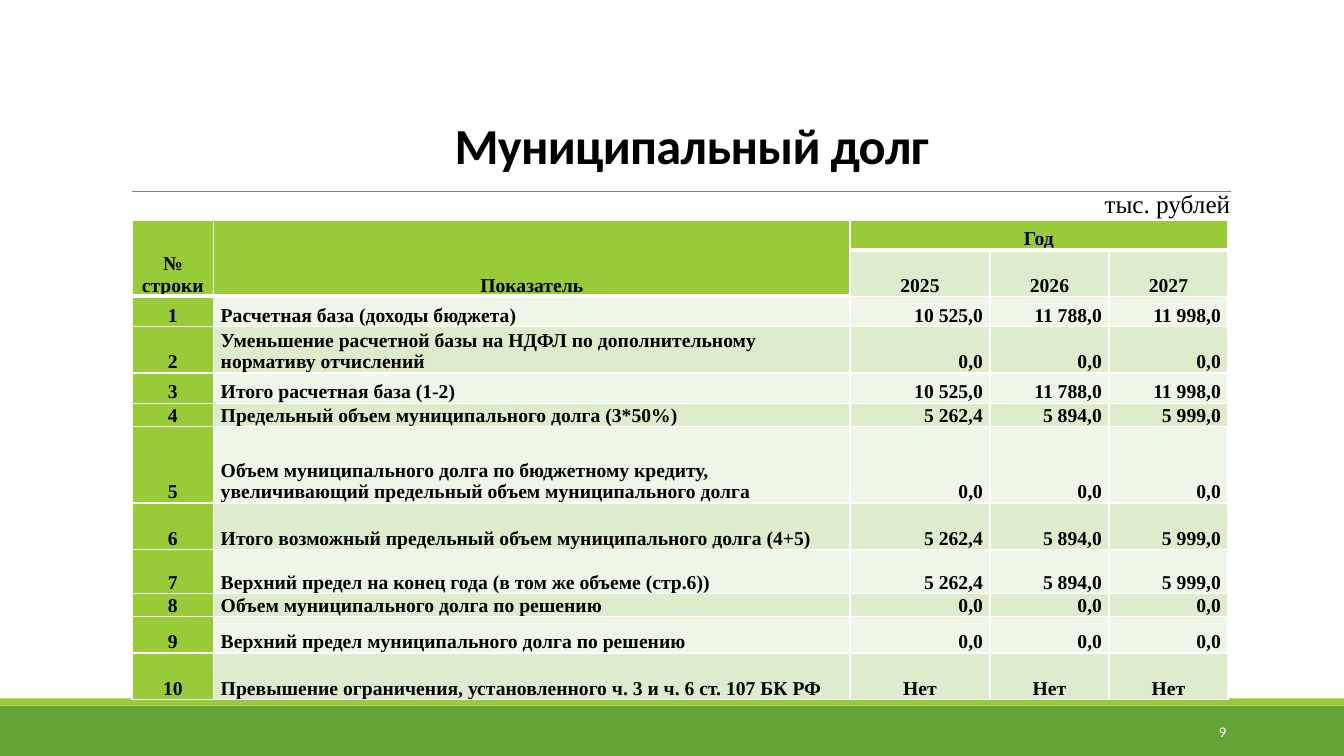
from lxml.etree import SubElement
from pptx import Presentation
from pptx.dml.color import RGBColor
from pptx.enum.shapes import MSO_CONNECTOR, MSO_SHAPE
from pptx.enum.text import MSO_ANCHOR, PP_ALIGN
from pptx.oxml.ns import qn
from pptx.util import Inches, Pt

COLORS = {"green": "63A537", "lime": "99CB38", "rule": "808080", "pale": "EFF6E8",
          "tint": "DEECCE", "white": "FFFFFF", "black": "000000"}
SERIF, SANS = "Times New Roman", "Calibri"
LEFT, CENTER, RIGHT = PP_ALIGN.LEFT, PP_ALIGN.CENTER, PP_ALIGN.RIGHT

YEARS = ["2025", "2026", "2027"]
BASE = ["10 525,0", "11 788,0", "11 998,0"]
LIMIT = ["5 262,4", "5 894,0", "5 999,0"]
ZERO = ["0,0"] * 3
# Label, values by year, row height
DEBT = [
    ("Расчетная база (доходы бюджета)", BASE, 0.3),
    ("Уменьшение расчетной базы на НДФЛ по дополнительному нормативу отчислений", ZERO, 0.46),
    ("Итого расчетная база (1-2)", BASE, 0.3),
    ("Предельный объем муниципального долга (3*50%)", LIMIT, 0.23),
    ("Объем муниципального долга по бюджетному кредиту, "
     "увеличивающий предельный объем муниципального долга", ZERO, 0.76),
    ("Итого возможный предельный объем муниципального долга (4+5)", LIMIT, 0.46),
    ("Верхний предел на конец года (в том же объеме (стр.6))", LIMIT, 0.44),
    ("Объем муниципального долга по решению", ZERO, 0.23),
    ("Верхний предел муниципального долга по решению", ZERO, 0.36),
    ("Превышение ограничения, установленного ч. 3 и ч. 6 ст. 107 БК РФ", ["Нет"] * 3, 0.46),
]
HEADS = [0.29, 0.46]
COLS = [0.81, 6.31, 1.39, 1.18, 1.18]


def color(name):
    return RGBColor.from_string(COLORS[name])


def write(frame, text, size, font, tone, align, bold=False):
    par = frame.paragraphs[0]
    par.alignment = align
    run = par.add_run()
    run.text = text
    run.font.size = Pt(size)
    run.font.name = font
    run.font.bold = bold
    run.font.color.rgb = color(tone)
    return par, run


def add_band(slide, left, top, width, height, tone):
    band = slide.shapes.add_shape(MSO_SHAPE.RECTANGLE, Inches(left), Inches(top),
                                  Inches(width), Inches(height))
    band.shadow.inherit = False
    band.fill.solid()
    band.fill.fore_color.rgb = color(tone)
    band.line.fill.background()


def add_rule(slide, left, top, width):
    rule = slide.shapes.add_connector(MSO_CONNECTOR.STRAIGHT, Inches(left), Inches(top),
                                      Inches(left + width), Inches(top))
    rule.line.color.rgb = color("rule")
    rule.line.width = Pt(0.5)
    SubElement(rule._element.spPr, qn("a:effectLst"))


def add_title(slide, left, top, width, height):
    title = slide.shapes.title
    title.left, title.top = Inches(left), Inches(top)
    title.width, title.height = Inches(width), Inches(height)
    frame = title.text_frame
    frame.vertical_anchor = MSO_ANCHOR.BOTTOM
    par, run = write(frame, "Муниципальный долг", 36, SANS, "black", CENTER, True)
    par.line_spacing = 0.85
    run._r.get_or_add_rPr().set("spc", "-50")


def add_note(slide, left, top, width, height, text, size, font, tone):
    box = slide.shapes.add_textbox(Inches(left), Inches(top), Inches(width), Inches(height))
    frame = box.text_frame
    frame.word_wrap = True
    frame.vertical_anchor = MSO_ANCHOR.MIDDLE
    write(frame, text, size, font, tone, RIGHT)


def set_cell(cell, tone, base=1):
    """Give a cell its white borders, fill, margins and anchor."""
    props = cell._tc.get_or_add_tcPr()
    for side, width in (("L", 1), ("R", 1), ("T", 1), ("B", base)):
        edge = SubElement(props, qn(f"a:ln{side}"), w=str(Pt(width)))
        fill = SubElement(edge, qn("a:solidFill"))
        SubElement(fill, qn("a:srgbClr"), val=COLORS["white"])
    cell.fill.solid()
    cell.fill.fore_color.rgb = color(tone)
    cell.margin_left = cell.margin_right = Inches(0.07)
    cell.margin_top = cell.margin_bottom = 0
    cell.vertical_anchor = MSO_ANCHOR.BOTTOM


def add_debt(slide, left, top):
    heights = HEADS + [height for _, _, height in DEBT]
    grid = slide.shapes.add_table(len(heights), len(COLS), Inches(left), Inches(top),
                                  Inches(sum(COLS)), Inches(sum(heights))).table
    grid.first_row = grid.horz_banding = False
    for col, width in zip(grid.columns, COLS):
        col.width = Inches(width)
    for row, height in zip(grid.rows, heights):
        row.height = Inches(height)

    texts = [["№ строки", "Показатель", "Год", "", ""], ["", "", *YEARS]]
    texts += [[str(num), label, *values] for num, (label, values, _) in enumerate(DEBT, 1)]
    for i, line in enumerate(texts):
        for j, text in enumerate(line):
            cell = grid.cell(i, j)
            head = i == 0 or (i == 1 and j < 2)
            band = "tint" if i % 2 else "pale"
            set_cell(cell, "lime" if head or j == 0 else band, 3 if head else 1)
            if i < 2 or j == 0 or text == "Нет":
                align = CENTER
            else:
                align = LEFT if j == 1 else RIGHT
            if text:
                write(cell.text_frame, text, 14, SERIF, "black", align, True)
    for j in range(2):
        grid.cell(0, j).merge(grid.cell(1, j))
    grid.cell(0, 2).merge(grid.cell(0, 4))


def main():
    deck = Presentation()
    deck.slide_width, deck.slide_height = Inches(13.33), Inches(7.5)
    slide = deck.slides.add_slide(deck.slide_layouts[5])
    add_band(slide, 0, 7, 13.33, 0.5, "green")
    add_band(slide, 0, 6.93, 13.33, 0.07, "lime")
    add_rule(slide, 1.31, 1.9, 10.9)
    add_title(slide, 2.16, 0.69, 9.4, 1.09)
    add_debt(slide, 1.31, 2.19)
    add_note(slide, 10.83, 7.06, 1.43, 0.4, "9", 10.5, SANS, "white")
    add_note(slide, 10.78, 1.82, 1.52, 0.4, "тыс. рублей", 18, SERIF, "black")
    deck.save("out.pptx")


if __name__ == "__main__":
    main()
